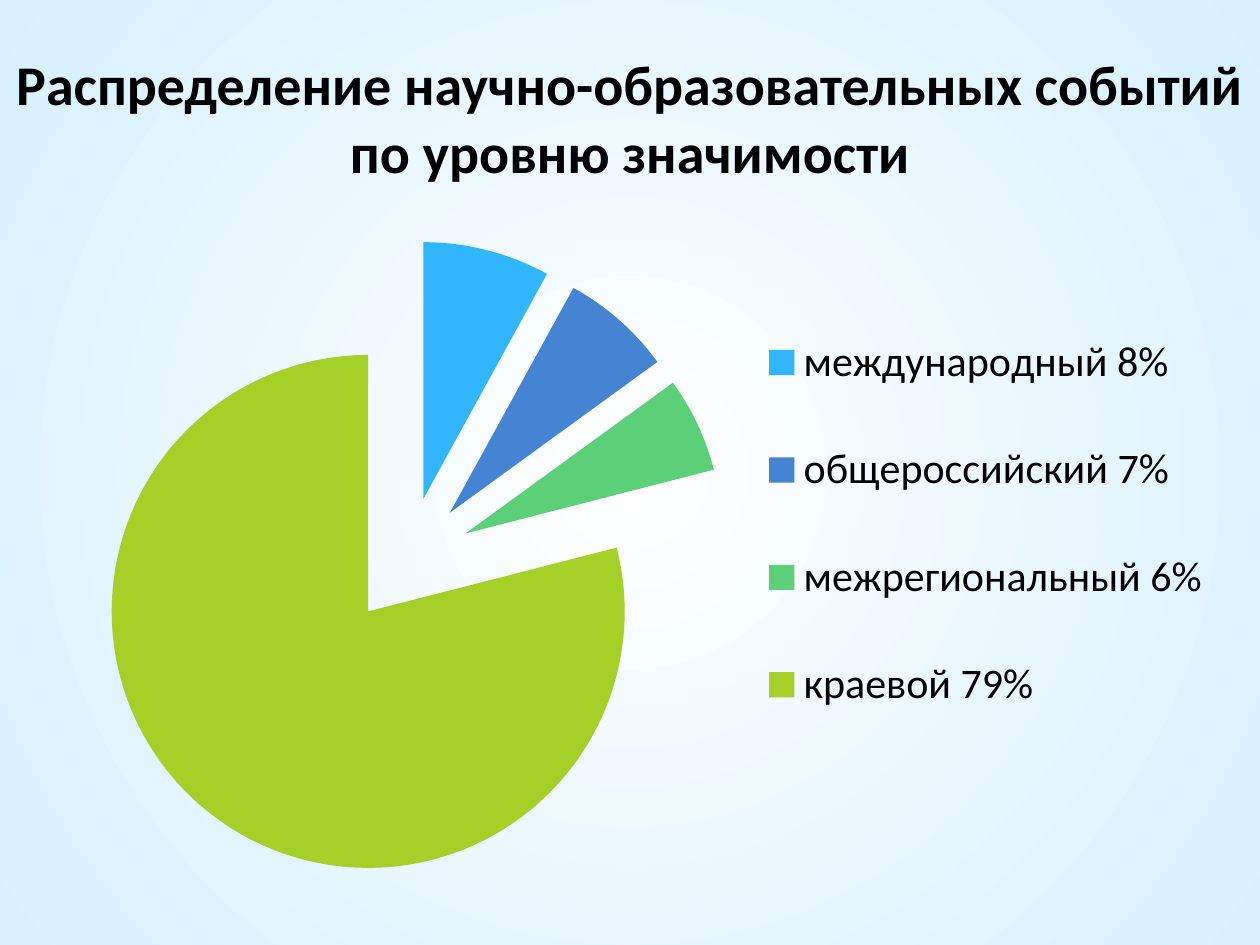
from lxml import etree
from pptx import Presentation
from pptx.chart.data import CategoryChartData
from pptx.dml.color import RGBColor as Rgb
from pptx.enum.chart import XL_CHART_TYPE as Kind, XL_LEGEND_POSITION as Side
from pptx.enum.text import MSO_ANCHOR as Anchor, PP_ALIGN as Align
from pptx.oxml import parse_xml
from pptx.oxml.ns import nsdecls, qn
from pptx.util import Pt

PX = 7257  # EMU per px, 126 px to the inch

THEME = {
    "font": "Calibri",
    "ink": Rgb.from_string("000000"),
    "glow": ("FFFFFF", "D6F0FF"),
    "title": Pt(32),
    "chart": Pt(18),
    "legend": Pt(24),
}
LEVELS = [
    ("международный 8%", 8, "31B6FD"),
    ("общероссийский 7%", 7, "4584D3"),
    ("межрегиональный 6%", 6, "5BD078"),
    ("краевой 79%", 79, "A5D028"),
]


def style(font, size):
    font.name = THEME["font"]
    font.size = size
    font.color.rgb = THEME["ink"]


def layout(x, y, w, h, inner=False):
    """Manual chart layout, as fractions of the chart frame."""
    target = '<c:layoutTarget val="inner"/>' if inner else ""
    return parse_xml(
        f'<c:layout {nsdecls("c")}><c:manualLayout>{target}'
        '<c:xMode val="edge"/><c:yMode val="edge"/>'
        f'<c:x val="{x}"/><c:y val="{y}"/><c:w val="{w}"/><c:h val="{h}"/>'
        "</c:manualLayout></c:layout>"
    )


prs = Presentation()
prs.slide_width, prs.slide_height = 1260 * PX, 945 * PX
slide = prs.slides.add_slide(prs.slide_layouts[6])

# Background: radial glow from the centre
fill = slide.background.fill
fill.gradient()
for stop, pos, tint in zip(fill.gradient_stops, (0, 1), THEME["glow"]):
    stop.position = pos
    stop.color.rgb = Rgb.from_string(tint)
grad = slide.background._cSld.find(".//" + qn("a:gradFill"))
grad.remove(grad.find(qn("a:lin")))
glow = etree.SubElement(grad, qn("a:path"), {"path": "circle"})
etree.SubElement(glow, qn("a:fillToRect"), dict.fromkeys("ltrb", "50000"))

# Title
box = slide.shapes.add_textbox(0, 38 * PX, 1260 * PX, 158 * PX)
frame = box.text_frame
frame.word_wrap = True
frame.vertical_anchor = Anchor.MIDDLE
para = frame.paragraphs[0]
para.alignment = Align.CENTER
run = para.add_run()
run.text = "Распределение научно-образовательных событий по уровню значимости"
style(run.font, THEME["title"])
run.font.bold = True

# Pie chart
data = CategoryChartData()
data.categories = [name for name, _, _ in LEVELS]
data.add_series("Series 1", [share for _, share, _ in LEVELS])
chart = slide.shapes.add_chart(
    Kind.PIE, 63 * PX, 220 * PX, 1168 * PX, 675 * PX, data
).chart
chart.has_title = False
style(chart.font, THEME["chart"])

plot = chart.plots[0]
plot.vary_by_categories = True
pie = plot.series[0]
for i, (_, _, tint) in enumerate(LEVELS):
    wedge = pie.points[i].format.fill
    wedge.solid()
    wedge.fore_color.rgb = Rgb.from_string(tint)
burst = etree.Element(qn("c:explosion"), val="25")
pie._element.find(qn("c:dPt")).addprevious(burst)

area = chart._chartSpace.find(".//" + qn("c:plotArea"))
for old in area.findall(qn("c:layout")):
    area.remove(old)
area.insert(0, layout(0.02, 0.03, 0.55, 0.95, inner=True))

# Legend
chart.has_legend = True
legend = chart.legend
legend.position = Side.RIGHT
legend.include_in_layout = False
style(legend.font, THEME["legend"])
key = legend._element
for old in key.findall(qn("c:layout")):
    key.remove(old)
key.find(qn("c:legendPos")).addnext(layout(0.59, 0.09, 0.4, 0.72))

prs.save("out.pptx")
